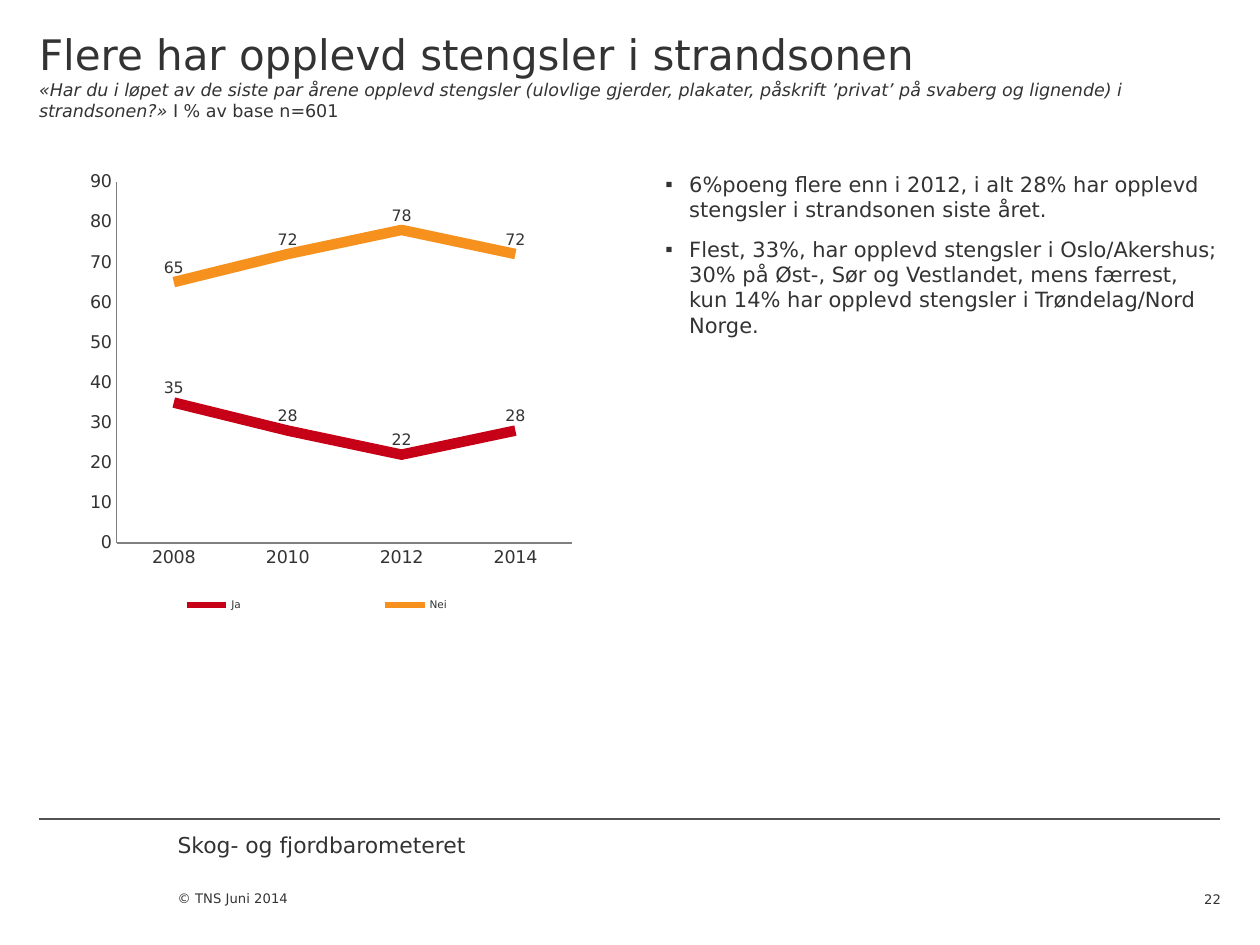
from pptx import Presentation
from pptx.chart.data import CategoryChartData
from pptx.dml.color import RGBColor
from pptx.enum.chart import XL_CHART_TYPE, XL_LABEL_POSITION, XL_LEGEND_POSITION, XL_TICK_MARK
from pptx.enum.shapes import MSO_CONNECTOR
from pptx.enum.text import MSO_ANCHOR, MSO_AUTO_SIZE, PP_ALIGN
from pptx.oxml import parse_xml
from pptx.oxml.ns import nsdecls, qn
from pptx.util import Inches, Pt

FONT = "DejaVu Sans"
TEXT = RGBColor(0x33, 0x33, 0x33)
RULE = RGBColor(0x52, 0x52, 0x52)
AXIS = RGBColor(0x80, 0x80, 0x80)
RED = RGBColor(0xC5, 0x00, 0x17)
ORANGE = RGBColor(0xF7, 0x91, 0x1E)

LEFT, RIGHT = 0.31, 9.68
HEADER_HEIGHT = 1.13
COLUMN_WIDTH = 4.41

TITLE = "Flere har opplevd stengsler i strandsonen"
QUESTION = ("«Har du i løpet av de siste par årene opplevd stengsler (ulovlige gjerder, "
            "plakater, påskrift ’privat’ på svaberg og lignende) i strandsonen?» ")
BASE = "I % av base n=601"
FINDINGS = [
    "6%poeng flere enn i 2012, i alt 28% har opplevd stengsler i strandsonen siste året.",
    "Flest, 33%, har opplevd stengsler i Oslo/Akershus; 30% på Øst-, Sør og Vestlandet, "
    "mens færrest, kun 14% har opplevd stengsler i Trøndelag/Nord Norge.",
]
YEARS = ["2008", "2010", "2012", "2014"]
ANSWERS = [("Ja", [35, 28, 22, 28], RED), ("Nei", [65, 72, 78, 72], ORANGE)]


def set_attributes(target, values):
    for name, value in values.items():
        setattr(target, name, value)


def format_font(font, size, italic=False):
    set_attributes(font, {"name": FONT, "size": Pt(size), "bold": False, "italic": italic})
    font.color.rgb = TEXT


def place(shape, box):
    names = ("left", "top", "width", "height")
    set_attributes(shape, dict(zip(names, map(Inches, box))))


def format_frame(frame, top=0, bottom=0, anchor=MSO_ANCHOR.TOP):
    set_attributes(frame, {
        "margin_left": 0, "margin_right": 0,
        "margin_top": Inches(top), "margin_bottom": Inches(bottom),
        "word_wrap": True, "auto_size": MSO_AUTO_SIZE.NONE, "vertical_anchor": anchor,
    })


def add_run(paragraph, text, size, italic=False):
    run = paragraph.add_run()
    run.text = text
    format_font(run.font, size, italic)


def fill_title(shape, box):
    place(shape, box)
    format_frame(shape.text_frame, top=0.23)
    paragraph = shape.text_frame.paragraphs[0]
    paragraph.alignment = PP_ALIGN.LEFT
    add_run(paragraph, TITLE, 24)
    paragraph.add_line_break()
    add_run(paragraph, QUESTION, 10, italic=True)
    add_run(paragraph, BASE, 10)


def fill_findings(shape, box):
    place(shape, box)
    frame = shape.text_frame
    format_frame(frame, top=0.23)
    for index, finding in enumerate(FINDINGS):
        paragraph = frame.add_paragraph() if index else frame.paragraphs[0]
        properties = paragraph._p.get_or_add_pPr()
        properties.set("marL", str(Inches(0.19)))
        properties.set("indent", str(-Inches(0.19)))
        properties.append(parse_xml(f'<a:buChar {nsdecls("a")} char="▪"/>'))
        paragraph.space_before = Pt(2.4 if index else 0)
        paragraph.space_after = Pt(6)
        add_run(paragraph, finding, 12)


def manual_layout(x, y, width, height, inner=False):
    """Return a chart layout element given in shares of the chart's size."""
    target = '<c:layoutTarget val="inner"/>' if inner else ""
    return parse_xml(
        f'<c:layout {nsdecls("c")}><c:manualLayout>{target}'
        '<c:xMode val="edge"/><c:yMode val="edge"/>'
        f'<c:x val="{x}"/><c:y val="{y}"/><c:w val="{width}"/><c:h val="{height}"/>'
        '</c:manualLayout></c:layout>')


def remove_layout(element):
    for layout in element.findall(qn("c:layout")):
        element.remove(layout)


def format_axis(axis):
    set_attributes(axis, {"has_major_gridlines": False, "major_tick_mark": XL_TICK_MARK.NONE,
                          "minor_tick_mark": XL_TICK_MARK.NONE})
    format_font(axis.tick_labels.font, 10)
    axis.format.line.color.rgb = AXIS
    axis.format.line.width = Pt(0.75)


def format_series(series, color):
    series.smooth = False
    series.format.line.color.rgb = color
    series.format.line.width = Pt(6)
    labels = series.data_labels
    set_attributes(labels, {"show_value": True, "position": XL_LABEL_POSITION.ABOVE})
    format_font(labels.font, 9)


def add_answer_chart(slide, box):
    data = CategoryChartData()
    data.categories = YEARS
    for name, values, _ in ANSWERS:
        data.add_series(name, values)
    chart = slide.shapes.add_chart(XL_CHART_TYPE.LINE, *map(Inches, box), data).chart
    chart.has_title = False
    format_font(chart.font, 18)

    format_axis(chart.category_axis)
    format_axis(chart.value_axis)
    set_attributes(chart.value_axis, {"minimum_scale": 0, "maximum_scale": 90, "major_unit": 10})
    set_attributes(chart.value_axis.tick_labels,
                   {"number_format": "#,##0", "number_format_is_linked": False})
    chart.plots[0].vary_by_categories = False
    for series, (_, _, color) in zip(chart.plots[0].series, ANSWERS):
        format_series(series, color)

    chart.has_legend = True
    legend = chart.legend
    set_attributes(legend, {"position": XL_LEGEND_POSITION.RIGHT, "include_in_layout": False})
    format_font(legend.font, 6)
    remove_layout(legend._element)
    legend._element.find(qn("c:legendPos")).addnext(manual_layout(0.01, 0.77, 0.98, 0.1))
    plot_area = chart._chartSpace.chart.plotArea
    remove_layout(plot_area)
    plot_area.insert(0, manual_layout(0.14, 0.07, 0.82, 0.64, inner=True))


def add_label(slide, box, text, size, bottom=0, anchor=MSO_ANCHOR.BOTTOM, alignment=PP_ALIGN.LEFT):
    frame = slide.shapes.add_textbox(*map(Inches, box)).text_frame
    format_frame(frame, bottom=bottom, anchor=anchor)
    frame.paragraphs[0].alignment = alignment
    add_run(frame.paragraphs[0], text, size)


def add_footer(slide, left, top, right, bottom):
    line = slide.shapes.add_connector(
        MSO_CONNECTOR.STRAIGHT, *map(Inches, (left, top, right, top)))
    line.line.color.rgb = RULE
    line.line.width = Pt(0.75)
    line._element.spPr.append(parse_xml(f'<a:effectLst {nsdecls("a")}/>'))

    text_left, lower_top = left + 1.1, top + 0.42
    add_label(slide, (text_left, top + 0.1, 3.31, 0.42), "Skog- og fjordbarometeret", 12.5,
              anchor=MSO_ANCHOR.TOP)
    add_label(slide, (text_left, lower_top, 2.78, bottom - lower_top), "© TNS Juni 2014", 7.5,
              bottom=0.31)
    add_label(slide, (right - 0.54, lower_top, 0.55, 0.28), "22", 7.5, alignment=PP_ALIGN.RIGHT)


def main():
    presentation = Presentation()
    presentation.slide_width, presentation.slide_height = Inches(10), Inches(7.5)
    slide = presentation.slides.add_slide(presentation.slide_layouts[1])
    fill_title(slide.shapes.title, (LEFT, 0, RIGHT - LEFT, HEADER_HEIGHT))
    fill_findings(slide.placeholders[1],
                  (RIGHT - COLUMN_WIDTH + 0.01, HEADER_HEIGHT, COLUMN_WIDTH, 5.25))
    add_answer_chart(slide, (LEFT, HEADER_HEIGHT, COLUMN_WIDTH, 4.48))
    add_footer(slide, LEFT, 6.5, RIGHT, 7.5)
    presentation.save("out.pptx")


if __name__ == "__main__":
    main()
